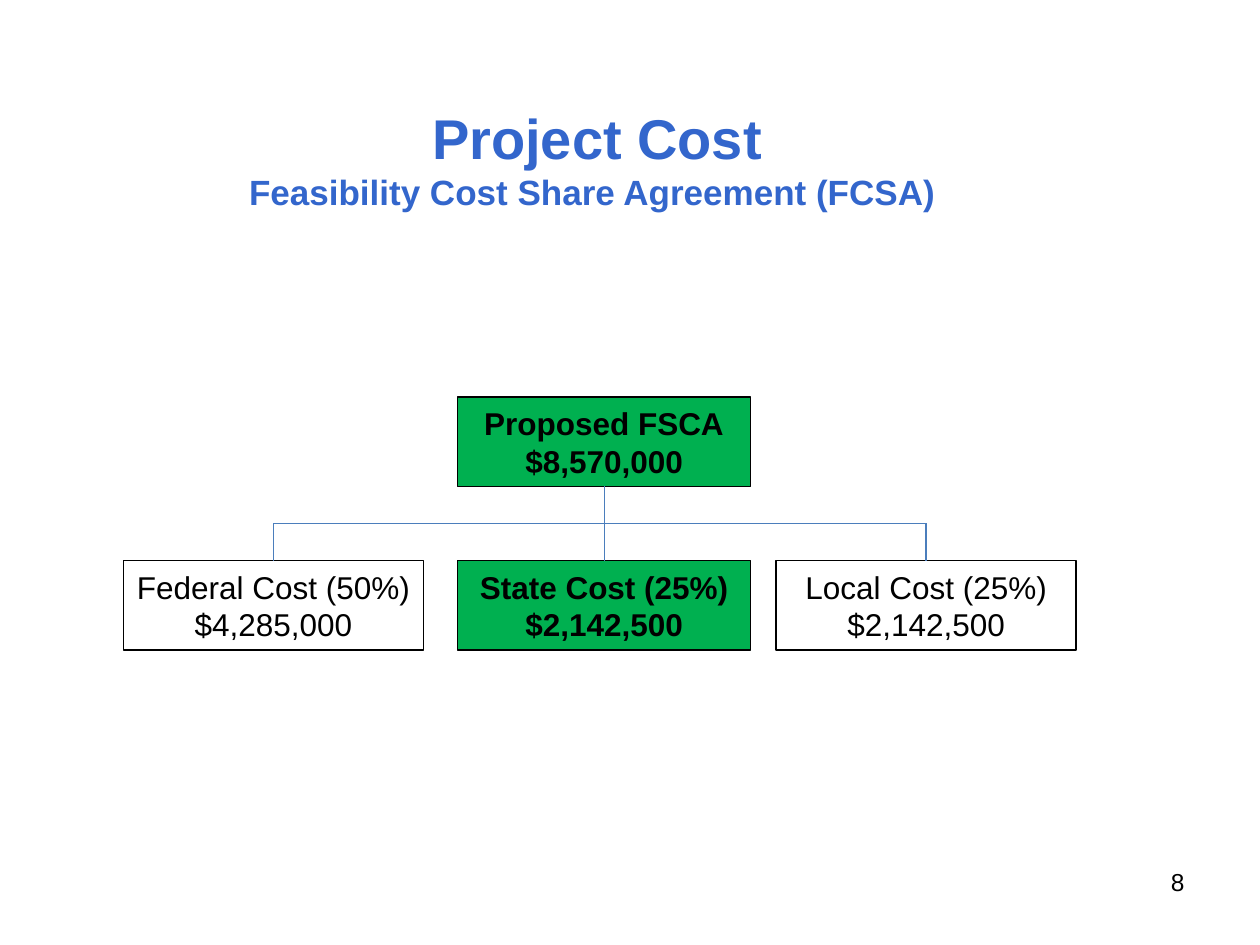
from lxml.etree import SubElement
from pptx import Presentation
from pptx.dml.color import RGBColor
from pptx.enum.shapes import MSO_CONNECTOR, MSO_SHAPE
from pptx.enum.text import MSO_ANCHOR, PP_ALIGN
from pptx.oxml.ns import qn
from pptx.util import Inches, Pt

BLACK, BLUE, GREEN, LINK = "000000", "3366CC", "00B050", "4B7EBC"
TOP, BOTTOM = 0, 2


def rgb(value):
    """Turn a hex string into a colour."""
    return RGBColor.from_string(value)


def add_run(paragraph, text, size, color=BLACK, bold=False):
    """Add one styled run to a paragraph."""
    run = paragraph.add_run()
    run.text = text
    run.font.name = "Arial"
    run.font.size = Pt(size)
    run.font.bold = bold
    run.font.color.rgb = rgb(color)


def add_heading(slide, left, top, width, height):
    """Place the title and its subtitle in one centred paragraph."""
    frame = slide.shapes.add_textbox(
        Inches(left), Inches(top), Inches(width), Inches(height)).text_frame
    frame.word_wrap = True
    frame.vertical_anchor = MSO_ANCHOR.MIDDLE
    heading = frame.paragraphs[0]
    heading.alignment = PP_ALIGN.CENTER
    add_run(heading, "Project Cost", 32, BLUE, True)
    heading.add_line_break()
    add_run(heading, "Feasibility Cost Share Agreement (FCSA) ", 20, BLUE, True)


def add_page_number(slide, left, top, width, height):
    """Place the page number at the right of its box."""
    frame = slide.shapes.add_textbox(
        Inches(left), Inches(top), Inches(width), Inches(height)).text_frame
    frame.word_wrap = True
    number = frame.paragraphs[0]
    number.alignment = PP_ALIGN.RIGHT
    add_run(number, "8", 14)


def add_cost(slide, left, top, width, height, lines, highlighted=False):
    """Place one cost box, green and bold when highlighted."""
    cost = slide.shapes.add_shape(
        MSO_SHAPE.RECTANGLE, Inches(left), Inches(top), Inches(width), Inches(height))
    cost.shadow.inherit = False
    if highlighted:
        cost.fill.solid()
        cost.fill.fore_color.rgb = rgb(GREEN)
    else:
        cost.fill.background()
    cost.line.color.rgb = rgb(BLACK)
    cost.line.width = Pt(0.75)
    frame = cost.text_frame
    frame.word_wrap = True
    frame.margin_left = frame.margin_right = Inches(0.05)
    frame.vertical_anchor = MSO_ANCHOR.MIDDLE
    for index, line in enumerate(lines):
        paragraph = frame.add_paragraph() if index else frame.paragraphs[0]
        paragraph.alignment = PP_ALIGN.CENTER
        add_run(paragraph, line, 18, bold=highlighted)
    return cost


def add_link(slide, start, end):
    """Draw a thin straight connector between two points."""
    link = slide.shapes.add_connector(MSO_CONNECTOR.STRAIGHT, *start, *end)
    link.line.color.rgb = rgb(LINK)
    link.line.width = Pt(0.75)
    SubElement(link._element.spPr, qn("a:effectLst"))
    return link


def top_middle(cost):
    """Return the middle of the top side of a cost box."""
    return cost.left + cost.width // 2, cost.top


def add_cost_tree(slide, left, top, width, height):
    """Place the total above its three shares and link them."""
    box_height, side_width, state_width, state_offset = 0.71, 2.38, 2.33, 2.65
    share_top = top + height - box_height
    total = add_cost(slide, left + state_offset, top, state_width, box_height,
                     ["Proposed FSCA", "$8,570,000"], True)
    federal = add_cost(slide, left, share_top, side_width, box_height,
                       ["Federal Cost (50%)", "$4,285,000"])
    state = add_cost(slide, left + state_offset, share_top, state_width, box_height,
                     ["State Cost (25%)", "$2,142,500"], True)
    local = add_cost(slide, left + width - side_width, share_top, side_width, box_height,
                     ["Local Cost (25%)", "$2,142,500"])

    trunk = add_link(slide, top_middle(total), top_middle(state))
    trunk.begin_connect(total, BOTTOM)
    trunk.end_connect(state, TOP)
    bar_y = (total.top + total.height + state.top) // 2
    bar_ends = [(top_middle(share)[0], bar_y) for share in (federal, local)]
    add_link(slide, *bar_ends)
    for share, bar_end in zip((federal, local), bar_ends):
        branch = add_link(slide, top_middle(share), bar_end)
        branch.begin_connect(share, TOP)


def main():
    """Build the project cost slide."""
    deck = Presentation()
    deck.slide_width, deck.slide_height = Inches(10), Inches(7.5)
    slide = deck.slides.add_slide(deck.slide_layouts[6])
    add_heading(slide, 0.24, 0.77, 9, 0.97)
    add_page_number(slide, 7.17, 6.83, 2.33, 0.52)
    add_cost_tree(slide, 0.98, 3.15, 7.56, 2.01)
    deck.save("out.pptx")


if __name__ == "__main__":
    main()
